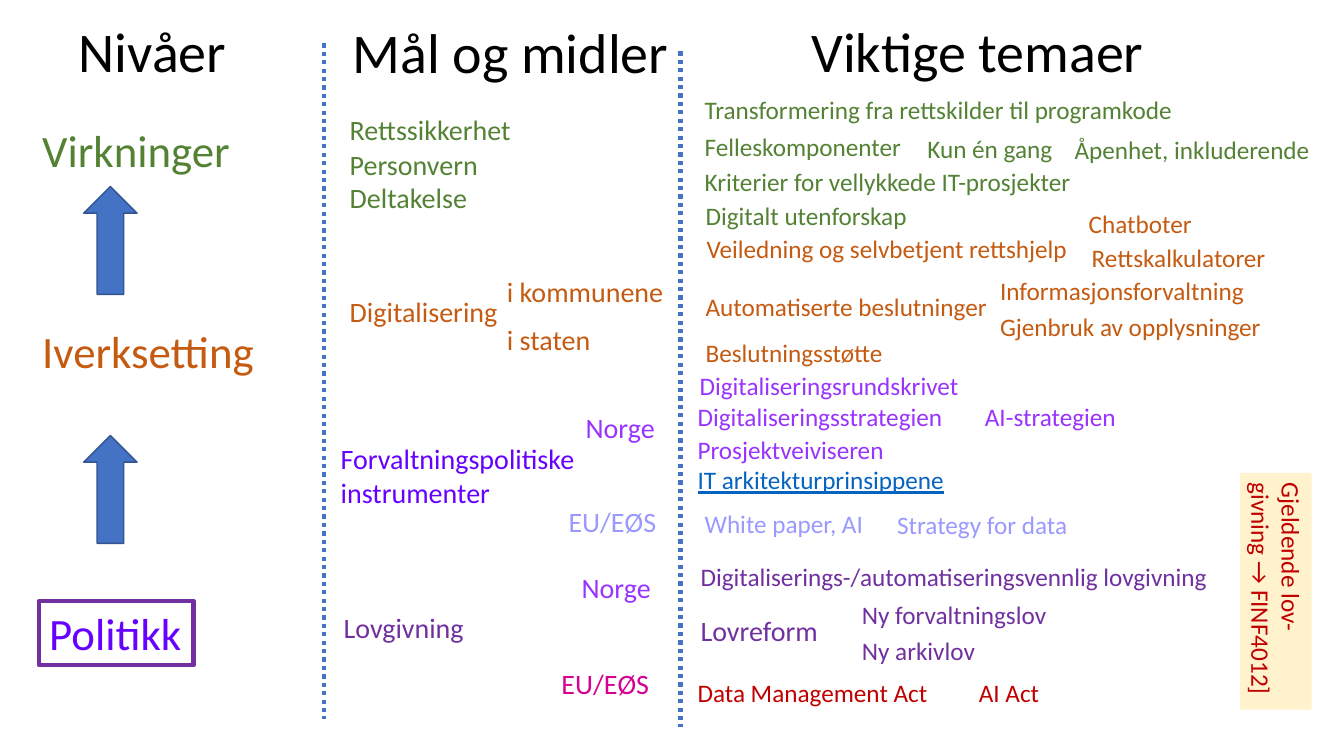
from lxml import etree
from pptx import Presentation
from pptx.dml.color import RGBColor
from pptx.enum import dml, shapes, text
from pptx.oxml import ns
from pptx.util import Inches, Pt

FONT = "Calibri"
COLORS = {
    "black": "000000",
    "green": "548235",
    "orange": "C55A11",
    "indigo": "6600FF",
    "violet": "9933FF",
    "lavender": "9999FF",
    "purple": "7030A0",
    "magenta": "D60093",
    "red": "C00000",
    "link": "0563C1",
    "blue": "4472C4",
    "dark blue": "325491",
    "cream": "FFF2CC",
}

HEADINGS = [
    ("Mål og midler", 3.4, 0.12, 3.37, "black"),
    ("Viktige temaer", 7.95, 0.11, 3.53, "black"),
]
LEVELS = [
    ("Virkninger", 0.32, 1.17, 2.08, "green"),
    ("Iverksetting", 0.32, 3.16, 2.34, "orange"),
]
GOALS_AND_MEANS = [
    ("Rettssikkerhet", 3.37, 1.07, 1.83, "green"),
    ("Personvern\nDeltakelse", 3.37, 1.41, 1.48, "green"),
    ("Digitalisering", 3.37, 2.87, 1.68, "orange"),
    ("i kommunene", 4.93, 2.67, 1.77, "orange"),
    ("i staten", 4.93, 3.15, 1.04, "orange"),
    ("Norge", 5.71, 4.02, 0.89, "violet"),
    ("Forvaltningspolitiske\ninstrumenter", 3.28, 4.33, 2.55, "indigo"),
    ("EU/EØS", 5.54, 4.96, 1.08, "lavender"),
    ("Norge", 5.67, 5.61, 0.89, "violet"),
    ("Lovgivning", 3.31, 6.01, 1.4, "purple"),
    ("EU/EØS", 5.47, 6.56, 1.08, "magenta"),
    ("Lovreform", 6.85, 6.04, 1.37, "purple"),
]
TOPICS = [
    ("Transformering fra rettskilder til programkode", 6.89, 0.89, 4.89, "green"),
    ("Felleskomponenter", 6.89, 1.25, 2.17, "green"),
    ("Kun én gang", 9.1, 1.27, 1.46, "green"),
    ("Åpenhet, inkluderende", 10.56, 1.28, 2.63, "green"),
    ("Kriterier for vellykkede IT-prosjekter", 6.89, 1.6, 3.89, "green"),
    ("Digitalt utenforskap", 6.9, 1.94, 2.22, "green"),
    ("Veiledning og selvbetjent rettshjelp", 6.91, 2.27, 3.83, "orange"),
    ("Chatboter", 10.7, 2.02, 1.23, "orange"),
    ("Rettskalkulatorer", 10.73, 2.35, 1.94, "orange"),
    ("Automatiserte beslutninger", 6.9, 2.84, 3.02, "orange"),
    ("Informasjonsforvaltning", 9.82, 2.68, 2.64, "orange"),
    ("Gjenbruk av opplysninger", 9.82, 3.04, 2.82, "orange"),
    ("Beslutningsstøtte", 6.9, 3.3, 1.98, "orange"),
    ("Digitaliseringsrundskrivet", 6.84, 3.62, 2.8, "violet"),
    ("Digitaliseringsstrategien", 6.82, 3.93, 2.66, "violet"),
    ("AI-strategien", 9.67, 3.93, 1.51, "violet"),
    ("Prosjektveiviseren", 6.82, 4.26, 2.06, "violet"),
    ("IT arkitekturprinsippene", 6.82, 4.56, 2.67, "link"),
    ("White paper, AI", 6.89, 4.99, 1.79, "lavender"),
    ("Strategy for data", 8.8, 5, 1.91, "lavender"),
    ("Digitaliserings-/automatiseringsvennlig lovgivning", 6.85, 5.52, 5.28, "purple"),
    ("Ny forvaltningslov", 8.45, 5.9, 2.05, "purple"),
    ("Ny arkivlov", 8.45, 6.25, 1.34, "purple"),
    ("Data Management Act", 6.82, 6.67, 2.49, "red"),
    ("AI Act", 9.61, 6.67, 0.81, "red"),
]


def rgb(color):
    return RGBColor.from_string(COLORS[color])


def text_height(words, size):
    return round(0.1 + 1.22 * size / 72 * len(words.split("\n")), 2)


def write(shape, words, size, color):
    frame = shape.text_frame
    frame.text = words
    frame.word_wrap = False
    frame.auto_size = text.MSO_AUTO_SIZE.SHAPE_TO_FIT_TEXT
    frame.vertical_anchor = text.MSO_ANCHOR.TOP
    for paragraph in frame.paragraphs:
        paragraph.alignment = text.PP_ALIGN.LEFT
        for run in paragraph.runs:
            run.font.name = FONT
            run.font.size = Pt(size)
            run.font.color.rgb = rgb(color)
            if color == "link":
                run.font.underline = True


def add_labels(slide, labels, size):
    for words, left, top, width, color in labels:
        box = slide.shapes.add_textbox(
            Inches(left), Inches(top), Inches(width), Inches(text_height(words, size))
        )
        write(box, words, size, color)


def add_title(slide, words, left, top, width, size):
    title = slide.shapes.title
    title.left, title.top = Inches(left), Inches(top)
    title.width, title.height = Inches(width), Inches(text_height(words, size))
    write(title, words, size, "black")


def add_preset(slide, kind, left, top, width, height, fill=None, line=None, weight=1):
    shape = slide.shapes.add_shape(
        kind, Inches(left), Inches(top), Inches(width), Inches(height)
    )
    shape.shadow.inherit = False
    if fill:
        shape.fill.solid()
        shape.fill.fore_color.rgb = rgb(fill)
    else:
        shape.fill.background()
    if line:
        shape.line.color.rgb = rgb(line)
        shape.line.width = Pt(weight)
    else:
        shape.line.fill.background()
    return shape


def add_arrow(slide, top):
    arrow = add_preset(
        slide, shapes.MSO_SHAPE.DOWN_ARROW, 0.83, top, 0.53, 1.07, "blue", "dark blue"
    )
    arrow.rotation = 180


def add_divider(slide, x, top):
    divider = slide.shapes.add_connector(
        shapes.MSO_CONNECTOR.STRAIGHT, Inches(x), Inches(top), Inches(x), Inches(top + 6.7)
    )
    divider.line.color.rgb = rgb("blue")
    divider.line.width = Pt(3)
    divider.line.dash_style = dml.MSO_LINE.ROUND_DOT
    etree.SubElement(divider._element.spPr, ns.qn("a:effectLst"))


def main():
    presentation = Presentation()
    presentation.slide_width = Inches(13.33)
    presentation.slide_height = Inches(7.5)
    slide = presentation.slides.add_slide(presentation.slide_layouts[5])

    add_title(slide, "Nivåer", 0.68, 0.11, 1.68, 40)
    add_labels(slide, HEADINGS, 40)
    add_labels(slide, LEVELS, 32)

    rectangle = shapes.MSO_SHAPE.RECTANGLE
    politics = add_preset(slide, rectangle, 0.39, 5.96, 1.53, 0.64, line="purple", weight=3)
    write(politics, "Politikk", 32, "indigo")
    for top in (1.85, 4.32):
        add_arrow(slide, top)

    current_law = add_preset(slide, rectangle, 11.48, 5.51, 2.35, 0.71, fill="cream")
    current_law.rotation = 90
    write(current_law, "Gjeldende lov-\vgivning → FINF4012]", 18, "red")

    add_divider(slide, 3.21, 0.43)
    add_divider(slide, 6.75, 0.51)
    add_labels(slide, GOALS_AND_MEANS, 20)
    add_labels(slide, TOPICS, 18)
    presentation.save("out.pptx")


if __name__ == "__main__":
    main()
